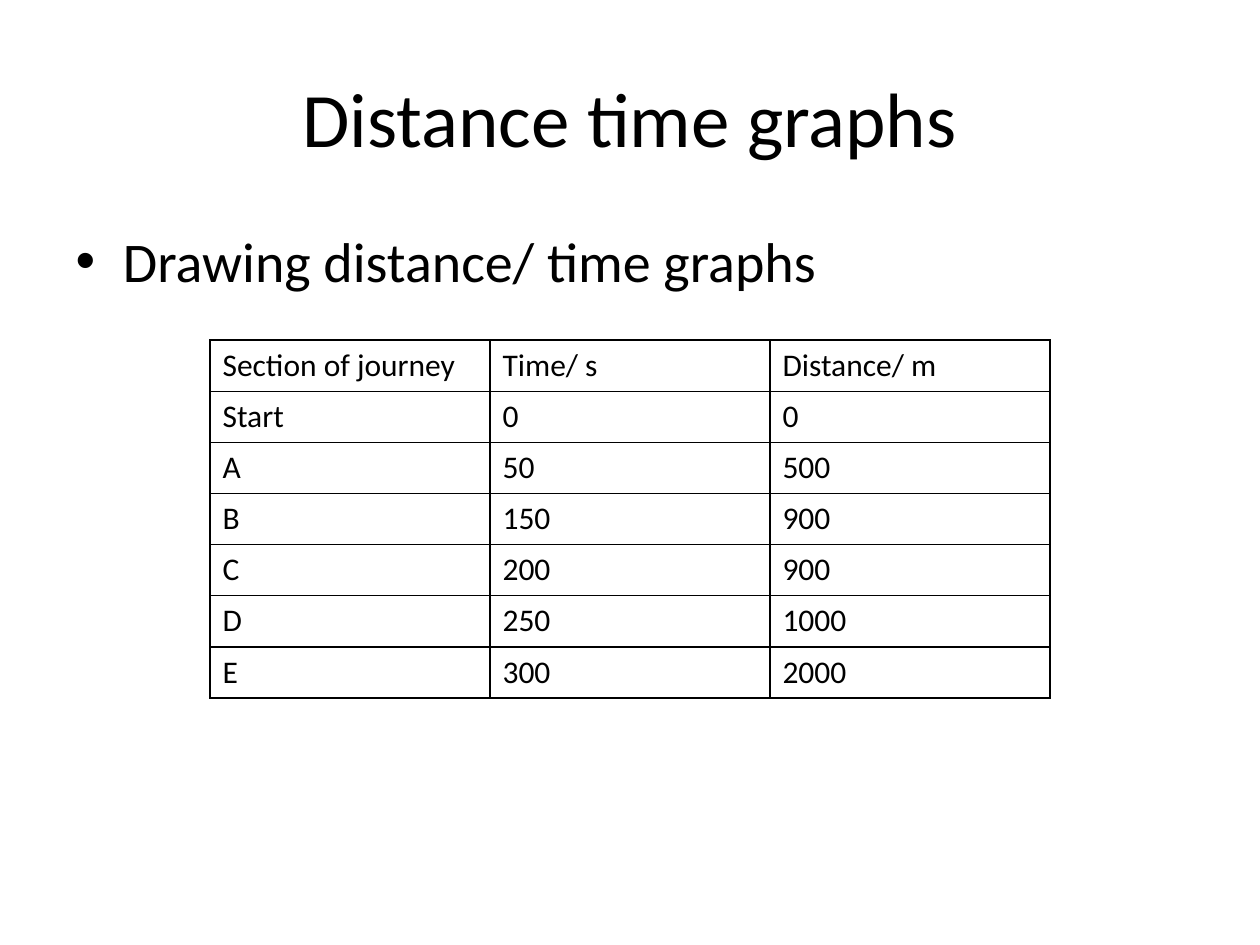
from lxml.etree import SubElement
from pptx import Presentation
from pptx.dml.color import RGBColor
from pptx.enum.text import MSO_ANCHOR, PP_ALIGN
from pptx.oxml.ns import qn
from pptx.util import Inches, Pt

BLACK = RGBColor(0, 0, 0)
WHITE = RGBColor(255, 255, 255)
FONT = "Calibri"
SLIDE_WIDTH, SLIDE_HEIGHT = Inches(10), Inches(7.5)
JOURNEY = [
    ("Section of journey", "Time/ s", "Distance/ m"),
    ("Start", "0", "0"),
    ("A", "50", "500"),
    ("B", "150", "900"),
    ("C", "200", "900"),
    ("D", "250", "1000"),
    ("E", "300", "2000"),
]


def share(left, top, width, height):
    """Turn shares of the slide's size into a box."""
    return (int(left * SLIDE_WIDTH), int(top * SLIDE_HEIGHT),
            int(width * SLIDE_WIDTH), int(height * SLIDE_HEIGHT))


def add_text(paragraph, text, size):
    """Add one black run to a paragraph."""
    run = paragraph.add_run()
    run.text = text
    run.font.name = FONT
    run.font.size = Pt(size)
    run.font.color.rgb = BLACK


def fill_placeholder(placeholder, box, text, size):
    """Move a placeholder into its box and write its only paragraph."""
    placeholder.left, placeholder.top, placeholder.width, placeholder.height = box
    paragraph = placeholder.text_frame.paragraphs[0]
    add_text(paragraph, text, size)
    return paragraph


def add_heading(slide, box):
    """Write the centred slide title."""
    heading = slide.shapes.title
    paragraph = fill_placeholder(heading, box, "Distance time graphs", 44)
    paragraph.alignment = PP_ALIGN.CENTER
    heading.text_frame.vertical_anchor = MSO_ANCHOR.MIDDLE


def add_topic(slide, box):
    """Write the bulleted topic in the body placeholder."""
    fill_placeholder(slide.placeholders[1], box, "Drawing distance/ time graphs", 32)


def add_borders(cell):
    """Draw a thin black line on each side of a cell."""
    properties = cell._tc.get_or_add_tcPr()
    for side in ("a:lnL", "a:lnR", "a:lnT", "a:lnB"):
        line = SubElement(properties, qn(side), w=str(Pt(1)))
        fill = SubElement(line, qn("a:solidFill"))
        SubElement(fill, qn("a:srgbClr"), val=str(BLACK))


def add_journey_table(slide, box):
    """Lay out the journey readings in equal columns and rows."""
    table = slide.shapes.add_table(len(JOURNEY), len(JOURNEY[0]), *box).table
    table.first_row = False
    table.horz_banding = False
    for row, readings in enumerate(JOURNEY):
        for column, reading in enumerate(readings):
            cell = table.cell(row, column)
            add_borders(cell)
            cell.fill.background()
            add_text(cell.text_frame.paragraphs[0], reading, 18)


def main():
    """Build and save the slide."""
    presentation = Presentation()
    presentation.slide_width, presentation.slide_height = SLIDE_WIDTH, SLIDE_HEIGHT
    slide = presentation.slides.add_slide(presentation.slide_layouts[1])
    slide.background.fill.solid()
    slide.background.fill.fore_color.rgb = WHITE
    add_heading(slide, share(0.05, 0.04, 0.9, 1 / 6))
    add_topic(slide, share(0.05, 7 / 30, 0.9, 0.66))
    add_journey_table(slide, share(1 / 6, 0.36, 2 / 3, 0.37))
    presentation.save("out.pptx")


if __name__ == "__main__":
    main()
